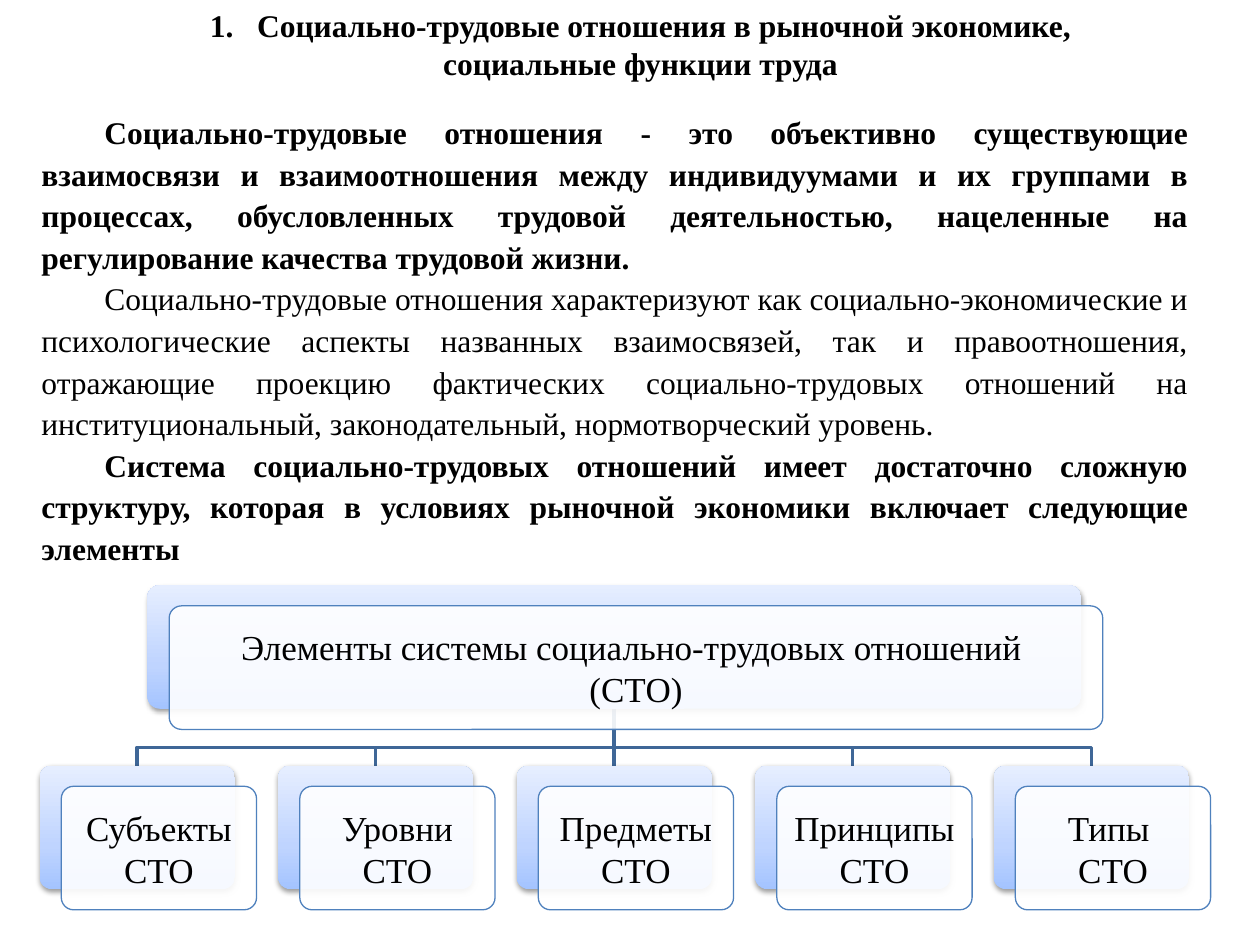
"""Build a slide on social and labour relations with a diagram of their elements."""
from dataclasses import dataclass

from lxml import etree
from pptx import Presentation
from pptx import util as u
from pptx.dml.color import RGBColor
from pptx.enum import shapes, text
from pptx.oxml.ns import qn

FONT = "Times New Roman"
CENTER_X, PITCH = 351, 136.3
CARD_H, SHIFT_X, SHIFT_Y = 70.6, 12.4, 11.8
ROOT_TOP, BUS_Y, ROW_TOP = 334.4, 427, 437.5
GRADIENT = ((0, "A4C4FF"), (35, "BFD4FF"), (100, "E6EEFF"))
CENTER, JUSTIFY = text.PP_ALIGN.CENTER, text.PP_ALIGN.JUSTIFY


@dataclass
class Card:
    center: float
    top: float
    width: float
    lines: tuple[str, ...]


TITLE = ("Социально-трудовые отношения в рыночной экономике, ", "социальные функции труда ")
BODY = (
    ("Социально-трудовые отношения - это объективно существующие взаимосвязи и "
     "взаимоотношения между индивидуумами и их группами в процессах, обусловленных "
     "трудовой деятельностью, нацеленные на регулирование качества трудовой жизни. ", True),
    ("Социально-трудовые отношения характеризуют как социально-экономические и "
     "психологические аспекты названных взаимосвязей, так и правоотношения, отражающие "
     "проекцию фактических социально-трудовых отношений на институциональный, "
     "законодательный, нормотворческий уровень. ", False),
    ("Система социально-трудовых отношений имеет достаточно сложную структуру, которая "
     "в условиях рыночной экономики включает следующие элементы ", True),
)
ROOT = Card(CENTER_X, ROOT_TOP, 533.5,
            ("Элементы системы социально-трудовых отношений ", "(СТО)"))
LABELS = (("Субъекты СТО",), ("Уровни СТО",), ("Предметы СТО",),
          ("Принципы СТО",), ("Типы ", "СТО"))
CHILDREN = [Card(CENTER_X + (i - 2) * PITCH, ROW_TOP, 111.6, lines)
            for i, lines in enumerate(LABELS)]


def color(value: str) -> RGBColor:
    return RGBColor.from_string(value)


def add_text(tf, content: str, *, size=18, bold=False, align=CENTER,
             spacing=None, margin=0, indent=0, number=False) -> None:
    p = tf.paragraphs[0] if not tf.paragraphs[0].runs else tf.add_paragraph()
    p.alignment = align
    if spacing:
        p.line_spacing = spacing
    pPr = p._p.get_or_add_pPr()
    pPr.set("marL", str(u.Pt(margin)))
    pPr.set("indent", str(u.Pt(indent)))
    if number:
        etree.SubElement(pPr, qn("a:buFont"), typeface="+mj-lt")
        etree.SubElement(pPr, qn("a:buAutoNum"), type="arabicPeriod")
    r = p.add_run()
    r.text = content
    r.font.name, r.font.size, r.font.bold = FONT, u.Pt(size), bold
    r.font.color.rgb = color("000000")


def add_box(s, left: float, top: float, width: float, height: float):
    tf = s.shapes.add_textbox(*map(u.Pt, (left, top, width, height))).text_frame
    tf.word_wrap = True
    return tf


def add_panel(s, left: float, top: float, width: float):
    sp = s.shapes.add_shape(shapes.MSO_SHAPE.ROUNDED_RECTANGLE,
                            *map(u.Pt, (left, top, width, CARD_H)))
    sp.adjustments[0] = 0.1
    sp.shadow.inherit = False
    return sp


def add_color_xml(parent, value: str, alpha: int) -> None:
    clr = etree.SubElement(parent, qn("a:srgbClr"), val=value)
    etree.SubElement(clr, qn("a:alpha"), val=str(alpha * 1000))


def draw_back(s, card: Card) -> None:
    sp = add_panel(s, card.center - card.width / 2, card.top, card.width)
    sp.line.fill.background()
    sp.fill.gradient()
    sp.fill.gradient_angle = 90
    stops = sp._element.spPr.find(".//" + qn("a:gsLst"))
    stops.clear()
    for position, value in GRADIENT:
        stop = etree.SubElement(stops, qn("a:gs"), pos=str(position * 1000))
        add_color_xml(stop, value, 100)
    shadow = etree.SubElement(sp._element.spPr.find(qn("a:effectLst")), qn("a:outerShdw"),
                              blurRad=str(u.Pt(3.1)), dist=str(u.Pt(1.6)),
                              dir="5400000", rotWithShape="0")
    add_color_xml(shadow, "000000", 38)


def draw_front(s, card: Card) -> None:
    sp = add_panel(s, card.center - card.width / 2 + SHIFT_X, card.top + SHIFT_Y, card.width)
    sp.fill.solid()
    sp.fill.fore_color.rgb = color("FFFFFF")
    clr = sp._element.spPr.find(qn("a:solidFill")).find(qn("a:srgbClr"))
    etree.SubElement(clr, qn("a:alpha"), val="90000")
    sp.line.color.rgb = color("4F81BD")
    sp.line.width = u.Pt(0.75)
    tf = sp.text_frame
    tf.word_wrap = True
    tf.vertical_anchor = text.MSO_ANCHOR.MIDDLE
    tf.margin_left = tf.margin_right = tf.margin_top = tf.margin_bottom = u.Pt(6)
    for line in card.lines:
        add_text(tf, line, size=20)


def draw_link(s, child: Card) -> None:
    x, y, end = u.Pt(CENTER_X), u.Pt(ROOT_TOP + CARD_H), u.Pt(child.center)
    bus, bottom = u.Pt(BUS_Y), u.Pt(child.top)
    if end == x:
        sp = s.shapes.add_connector(shapes.MSO_CONNECTOR.STRAIGHT, x, y, x, bottom)
        etree.SubElement(sp._element.spPr, qn("a:effectLst"))
    else:
        outline = s.shapes.build_freeform(x, y)
        outline.add_line_segments([(x, bus), (end, bus), (end, bottom)], close=False)
        sp = outline.convert_to_shape()
        sp.fill.background()
        sp.shadow.inherit = False
    sp.line.color.rgb = color("3F6797")
    sp.line.width = u.Pt(2)


def main() -> None:
    prs = Presentation()
    prs.slide_width, prs.slide_height = u.Pt(720), u.Pt(540)
    s = prs.slides.add_slide(prs.slide_layouts[6])
    title = add_box(s, 16.6, 0, 703.4, 51)
    for i, line in enumerate(TITLE):
        add_text(title, line, bold=True, margin=27, indent=-27, number=i == 0)
    body = add_box(s, 16.6, 59, 669.6, 269)
    for content, bold in BODY:
        add_text(body, content, bold=bold, align=JUSTIFY, spacing=1.1, indent=36)
    for child in reversed(CHILDREN):
        draw_link(s, child)
    for card in (ROOT, *CHILDREN):
        draw_back(s, card)
        draw_front(s, card)
    prs.save("out.pptx")


if __name__ == "__main__":
    main()
